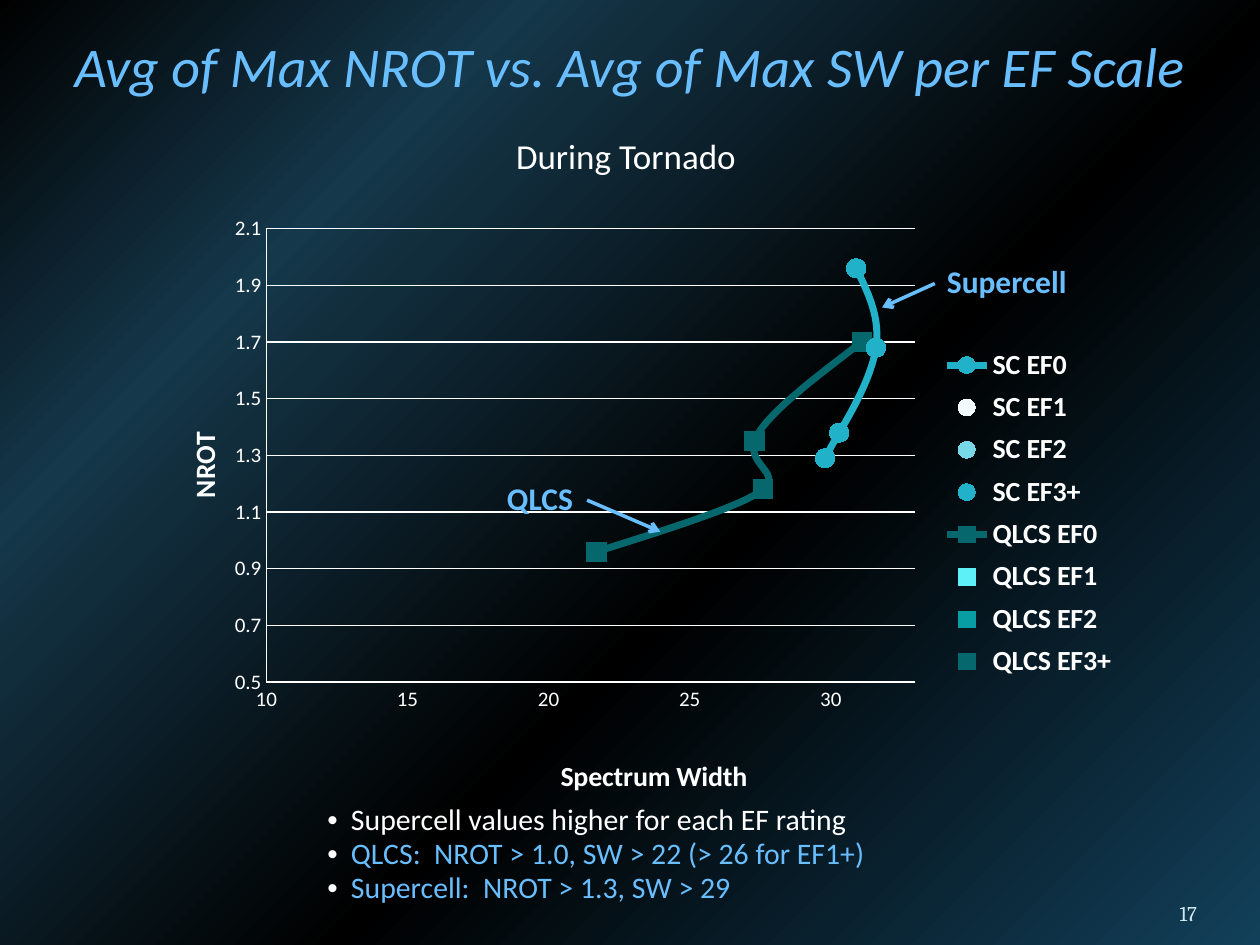
"""Build the slide comparing average maximum NROT with spectrum width per EF rating."""
from dataclasses import dataclass

import pptx
import pptx.chart.data
import pptx.dml.color
import pptx.enum.chart
import pptx.enum.shapes
import pptx.enum.text
import pptx.oxml
import pptx.oxml.ns
import pptx.util

Pt = pptx.util.Pt
Align = pptx.enum.text.PP_ALIGN
Marker = pptx.enum.chart.XL_MARKER_STYLE
qn = pptx.oxml.ns.qn


@dataclass(frozen=True)
class Theme:
    body_font: str = "Calibri"
    number_font: str = "Cambria"
    white: str = "FFFFFF"
    accent: str = "69BEFF"
    pale: str = "D1EAEE"
    supercell: str = "21B2C9"
    qlcs: str = "06686C"
    supercell_marks: tuple = ("F1FBFD", "77D9E8", "21B2C9")
    qlcs_marks: tuple = ("5EF0F7", "089CA3", "06686C")
    backdrop: tuple = ((0, "12405A"), (42, "000000"), (69, "112C3B"),
                       (76, "15384B"), (100, "000000"))
    title: int = 32
    subtitle: int = 20
    callout: int = 18
    bullet: int = 17
    label: int = 16
    tick: int = 12


class SlideBuilder:
    def __init__(self, slide, theme):
        self.slide = slide
        self.theme = theme

    def rgb(self, color):
        return pptx.dml.color.RGBColor.from_string(color)

    def style(self, font, size, color, bold=False, italic=False, face=None):
        font.name = face or self.theme.body_font
        font.size = Pt(size)
        font.bold = bold
        font.italic = italic
        font.color.rgb = self.rgb(color)

    def xml(self, markup):
        return pptx.oxml.parse_xml(markup)

    def background(self):
        stops = "".join(
            f'<a:gs pos="{position * 1000}"><a:srgbClr val="{color}"/></a:gs>'
            for position, color in self.theme.backdrop)
        self.slide.element.cSld.insert(0, self.xml(
            f'<p:bg {pptx.oxml.ns.nsdecls("p", "a")}><p:bgPr><a:gradFill rotWithShape="1">'
            f'<a:gsLst>{stops}</a:gsLst><a:path path="circle">'
            '<a:fillToRect l="100000" t="100000"/></a:path></a:gradFill>'
            '<a:effectLst/></p:bgPr></p:bg>'))

    def text(self, box, lines, size, color, align=Align.CENTER, **look):
        frame = self.slide.shapes.add_textbox(*map(Pt, box)).text_frame
        frame.word_wrap = True
        frame.text = "\n".join(lines)
        for paragraph in frame.paragraphs:
            paragraph.alignment = align
            for run in paragraph.runs:
                self.style(run.font, size, color, **look)
        return frame

    def bullets(self, box, items):
        frame = self.text(box, [line for line, _ in items], self.theme.bullet,
                          self.theme.white, Align.LEFT)
        for paragraph, (_, color) in zip(frame.paragraphs, items):
            paragraph.line_spacing = 0.95
            paragraph.runs[0].font.color.rgb = self.rgb(color)
            properties = paragraph._p.get_or_add_pPr()
            properties.set("marL", str(Pt(13.5)))
            properties.set("indent", str(-Pt(13.5)))
            namespace = pptx.oxml.ns.nsdecls("a")
            properties.append(self.xml(
                f'<a:buClr {namespace}><a:srgbClr val="{self.theme.white}"/></a:buClr>'))
            properties.append(self.xml(f'<a:buFont {namespace} typeface="Arial"/>'))
            properties.append(self.xml(f'<a:buChar {namespace} char="•"/>'))

    def page_number(self, box, number):
        frame = self.text(box, [number], self.theme.tick, self.theme.pale,
                          Align.RIGHT, face=self.theme.number_font)
        frame.vertical_anchor = pptx.enum.text.MSO_ANCHOR.BOTTOM
        frame.margin_left = frame.margin_right = 0
        frame.margin_top = frame.margin_bottom = 0

    def arrow(self, start, end):
        pointer = self.slide.shapes.add_connector(
            pptx.enum.shapes.MSO_CONNECTOR.STRAIGHT, *map(Pt, start + end))
        pointer.line.color.rgb = self.rgb(self.theme.accent)
        pointer.line.width = Pt(2)
        namespace = pptx.oxml.ns.nsdecls("a")
        pointer.line._get_or_add_ln().append(
            self.xml(f'<a:tailEnd {namespace} type="arrow"/>'))
        pointer._element.spPr.append(self.xml(f'<a:effectLst {namespace}/>'))

    def place(self, part, **fractions):
        for old in part.findall(qn("c:layout")):
            part.remove(old)
        inner = '<c:layoutTarget val="inner"/>' if part.tag == qn("c:plotArea") else ""
        modes = '<c:xMode val="edge"/><c:yMode val="edge"/>'
        sizes = "".join(f'<c:{key} val="{value}"/>' for key, value in fractions.items())
        layout = self.xml(f'<c:layout {pptx.oxml.ns.nsdecls("c")}><c:manualLayout>'
                          f'{inner}{modes}{sizes}</c:manualLayout></c:layout>')
        leading = [child for child in part if child.tag in (qn("c:tx"), qn("c:legendPos"))]
        part.insert(len(leading), layout)

    def axis(self, axis, title, low, high, step, corner):
        axis.minimum_scale, axis.maximum_scale, axis.major_unit = low, high, step
        axis.major_tick_mark = axis.minor_tick_mark = pptx.enum.chart.XL_TICK_MARK.NONE
        axis.format.line.color.rgb = self.rgb(self.theme.white)
        axis.format.line.width = Pt(0.75)
        axis.tick_labels.number_format = "General"
        axis.tick_labels.number_format_is_linked = False
        self.style(axis.tick_labels.font, self.theme.tick, self.theme.white)
        axis.axis_title.text_frame.text = title
        heading = axis.axis_title.text_frame.paragraphs[0].runs[0]
        self.style(heading.font, self.theme.label, self.theme.white, bold=True)
        self.place(axis.axis_title._element, x=corner[0], y=corner[1])

    def scatter(self, box, storms):
        data = pptx.chart.data.XyChartData()
        looks = []
        for storm, symbol, points, color, marks in storms:
            ratings = [("EF0", points, color)]
            ratings += [(f"EF{rating}", [(1, 1)], mark)
                        for rating, mark in zip(("1", "2", "3+"), marks)]
            for rating, pairs, fill in ratings:
                series = data.add_series(f"{storm} {rating}")
                for width, rotation in pairs:
                    series.add_data_point(width, rotation)
                looks.append((symbol, fill, len(pairs) > 1))
        chart = self.slide.shapes.add_chart(
            pptx.enum.chart.XL_CHART_TYPE.XY_SCATTER_SMOOTH, *map(Pt, box), data).chart
        self.style(chart.font, 10, self.theme.white)
        chart.has_title = False
        plot = chart.plots[0]
        plot.vary_by_categories = False
        for series, (symbol, fill, connected) in zip(plot.series, looks):
            series.marker.style = symbol
            series.marker.size = 11 if connected else 7
            series.marker.format.fill.solid()
            series.marker.format.fill.fore_color.rgb = self.rgb(fill)
            series.marker.format.line.fill.background()
            if connected:
                series.format.line.color.rgb = self.rgb(fill)
                series.format.line.width = Pt(4)
            else:
                series.format.line.fill.background()
        for smooth in chart._chartSpace.xpath(".//c:smooth"):
            smooth.set("val", "1")
        self.axis(chart.category_axis, "Spectrum Width", 10, 33, 5, (0.42, 0.93))
        self.axis(chart.value_axis, "NROT", 0.5, 2.1, 0.2, (0.04, 0.38))
        chart.category_axis.has_major_gridlines = False
        chart.value_axis.has_major_gridlines = True
        gridline = chart.value_axis.major_gridlines.format.line
        gridline.color.rgb = self.rgb(self.theme.white)
        gridline.width = Pt(0.75)
        chart.has_legend = True
        chart.legend.position = pptx.enum.chart.XL_LEGEND_POSITION.RIGHT
        chart.legend.include_in_layout = False
        self.style(chart.legend.font, self.theme.label, self.theme.white, bold=True)
        self.place(chart.legend._element, x=0.81, y=0.23, w=0.18, h=0.59)
        self.place(chart._chartSpace.xpath(".//c:plotArea")[0],
                   x=0.127, y=0.042, w=0.658, h=0.769)


def main():
    theme = Theme()
    deck = pptx.Presentation()
    deck.slide_width, deck.slide_height = Pt(720), Pt(540)
    builder = SlideBuilder(deck.slides.add_slide(deck.slide_layouts[6]), theme)
    builder.background()
    builder.page_number((624, 500.4, 60, 28.8), "17")
    supercell_points = [(29.8, 1.29), (30.3, 1.38), (31.6, 1.68), (30.9, 1.96)]
    qlcs_points = [(21.7, 0.96), (27.6, 1.18), (27.3, 1.35), (31.1, 1.7)]
    builder.scatter((80.6, 116.6, 563.8, 342), [
        ("SC", Marker.CIRCLE, supercell_points, theme.supercell, theme.supercell_marks),
        ("QLCS", Marker.SQUARE, qlcs_points, theme.qlcs, theme.qlcs_marks)])
    builder.text((0, 14.4, 720, 46), ["Avg of Max NROT vs. Avg of Max SW per EF Scale"],
                 theme.title, theme.accent, italic=True)
    builder.bullets((180, 455.8, 354, 66), [
        ("Supercell values higher for each EF rating", theme.white),
        ("QLCS:  NROT > 1.0, SW > 22 (> 26 for EF1+)", theme.accent),
        ("Supercell:  NROT > 1.3, SW > 29", theme.accent)])
    for storm, box, start, end in (
            ("QLCS", (275.8, 270, 65.5, 29), (335.5, 285.8), (377.3, 303.8)),
            ("Supercell", (531.4, 146.2, 87.8, 29), (534.2, 162), (504, 175.7))):
        builder.text(box, [storm], theme.callout, theme.accent, bold=True)
        builder.arrow(start, end)
    builder.text((0, 73.4, 720, 30), ["During Tornado "], theme.subtitle, theme.white)
    deck.save("out.pptx")


if __name__ == "__main__":
    main()
